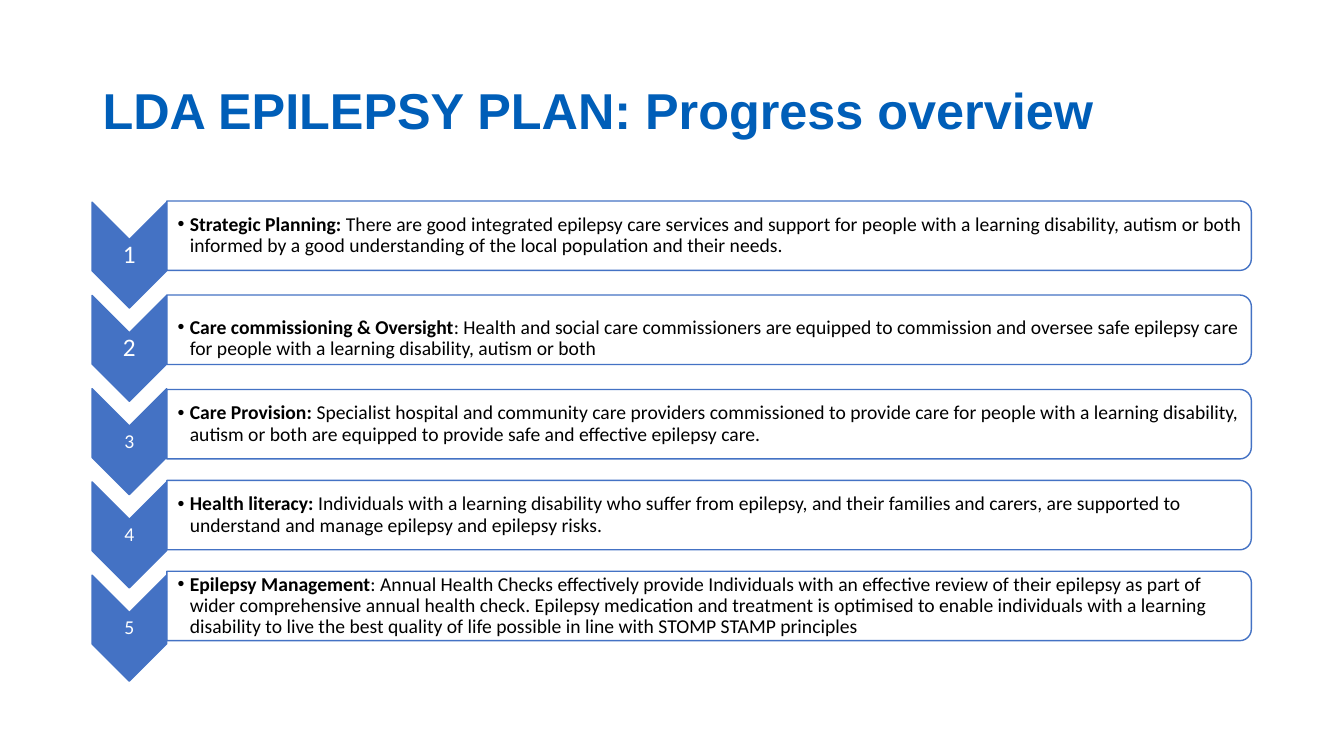
from pptx import Presentation
from pptx.dml.color import RGBColor
from pptx.enum.shapes import MSO_SHAPE
from pptx.enum.text import MSO_ANCHOR, MSO_AUTO_SIZE, PP_ALIGN
from pptx.oxml.ns import qn
from pptx.util import Cm, Pt
from lxml import etree

# Content: number size, bar centre, text drop (cm), heading, wording
TITLE = "LDA EPILEPSY PLAN: Progress overview"
STEPS = [
    (18, 5.94, 0, "Strategic Planning: ",
     "There are good integrated epilepsy care services and support for people "
     "with a learning disability, autism or both informed by a good "
     "understanding of the local population and their needs."),
    (18, 8.31, 0.23, "Care commissioning & Oversight",
     ": Health and social care commissioners are equipped to commission and "
     "oversee safe epilepsy care for people with a learning disability, "
     "autism or both"),
    (14, 10.69, 0, "Care Provision: ",
     "Specialist hospital and community care providers commissioned to provide "
     "care for people with a learning disability, autism or both are equipped "
     "to provide safe and effective epilepsy care."),
    (14, 12.98, 0, "Health literacy: ",
     "Individuals with a learning disability who suffer from epilepsy, and "
     "their families and carers, are supported to understand and manage "
     "epilepsy and epilepsy risks."),
    (14, 15.27, 0, "Epilepsy Management",
     ": Annual Health Checks effectively provide Individuals with an effective "
     "review of their epilepsy as part of wider comprehensive annual health "
     "check. Epilepsy medication and treatment is optimised to enable "
     "individuals with a learning disability to live the best quality of life "
     "possible in line with STOMP STAMP principles"),
]

NAVY = RGBColor(0x00, 0x5E, 0xB8)
BLUE = RGBColor(0x44, 0x72, 0xC4)
WHITE = RGBColor(0xFF, 0xFF, 0xFF)
BLACK = RGBColor(0x00, 0x00, 0x00)
CHEVRON, BAR = MSO_SHAPE.CHEVRON, MSO_SHAPE.ROUND_2_SAME_RECTANGLE
MIDDLE, LEFT, CENTER = MSO_ANCHOR.MIDDLE, PP_ALIGN.LEFT, PP_ALIGN.CENTER

# Layout in cm
ARROW_X, ARROW_Y, PITCH = 3.26, 6.43, 2.35
BAR_X = 17.87
INSET = 0.03


def place(x, y, wide, high):
    """Turn a centre and a size into left, top, width, height."""
    return Cm(x - wide / 2), Cm(y - high / 2), Cm(wide), Cm(high)


def style(run, **form):
    color = form.pop("color")
    for key, value in form.items():
        setattr(run.font, key, value)
    run.font.color.rgb = color


def add_turned(kind, spot, color):
    shape = slide.shapes.add_shape(kind, *spot)
    shape.rotation = 90
    shape.shadow.inherit = False
    shape.fill.solid()
    shape.fill.fore_color.rgb = color
    shape.line.color.rgb = BLUE
    shape.line.width = Pt(1)
    return shape


def add_text(spot, left, align, runs):
    frame = slide.shapes.add_textbox(*spot).text_frame
    form = {"word_wrap": True, "vertical_anchor": MIDDLE,
            "margin_left": Cm(left), "margin_right": Cm(INSET),
            "margin_top": Cm(INSET), "margin_bottom": Cm(INSET)}
    for key, value in form.items():
        setattr(frame, key, value)
    para = frame.paragraphs[0]
    para.alignment, para.line_spacing = align, 0.9
    for text, size, bold, color in runs:
        run = para.add_run()
        run.text = text
        style(run, name="Calibri", size=Pt(size), bold=bold, color=color)
    return para


def add_bullet(para):
    props = para._p.get_or_add_pPr()
    props.set("marL", str(Cm(0.31)))
    props.set("indent", str(-Cm(0.31)))
    etree.SubElement(props, qn("a:buFont")).set("typeface", "Arial")
    etree.SubElement(props, qn("a:buChar")).set("char", "•")


deck = Presentation()
deck.slide_width, deck.slide_height = Cm(33.87), Cm(19.05)
slide = deck.slides.add_slide(deck.slide_layouts[5])

# Title
title = slide.shapes.title
title.left, title.top, title.width, title.height = Cm(2.33), Cm(1.01), Cm(29.21), Cm(3.68)
frame = title.text_frame
frame.text = TITLE
frame.auto_size = MSO_AUTO_SIZE.NONE
frame.vertical_anchor = MIDDLE
para = frame.paragraphs[0]
para.alignment, para.line_spacing = LEFT, 0.9
style(para.runs[0], name="Arial", size=Pt(36), bold=True, color=NAVY)

# Steps: arrow, number, bar, wording
for i, (size, bar_y, drop, head, body) in enumerate(STEPS):
    arrow_y = ARROW_Y + i * PITCH
    add_turned(CHEVRON, place(ARROW_X, arrow_y, 2.67, 1.88), BLUE)
    add_text(place(ARROW_X, arrow_y, 1.88, 0.82), INSET, CENTER,
             [(str(i + 1), size, False, WHITE)])

    bar = add_turned(BAR, place(BAR_X, bar_y, 1.75, 27.33), WHITE)
    tint = bar.fill._xPr.find(qn("a:solidFill"))[0]
    etree.SubElement(tint, qn("a:alpha")).set("val", "90000")
    wording = add_text(place(17.82, bar_y + drop, 27.25, 1.57), 0.28, LEFT,
                       [(head, 14, True, BLACK), (body, 14, False, BLACK)])
    add_bullet(wording)

deck.save("out.pptx")
